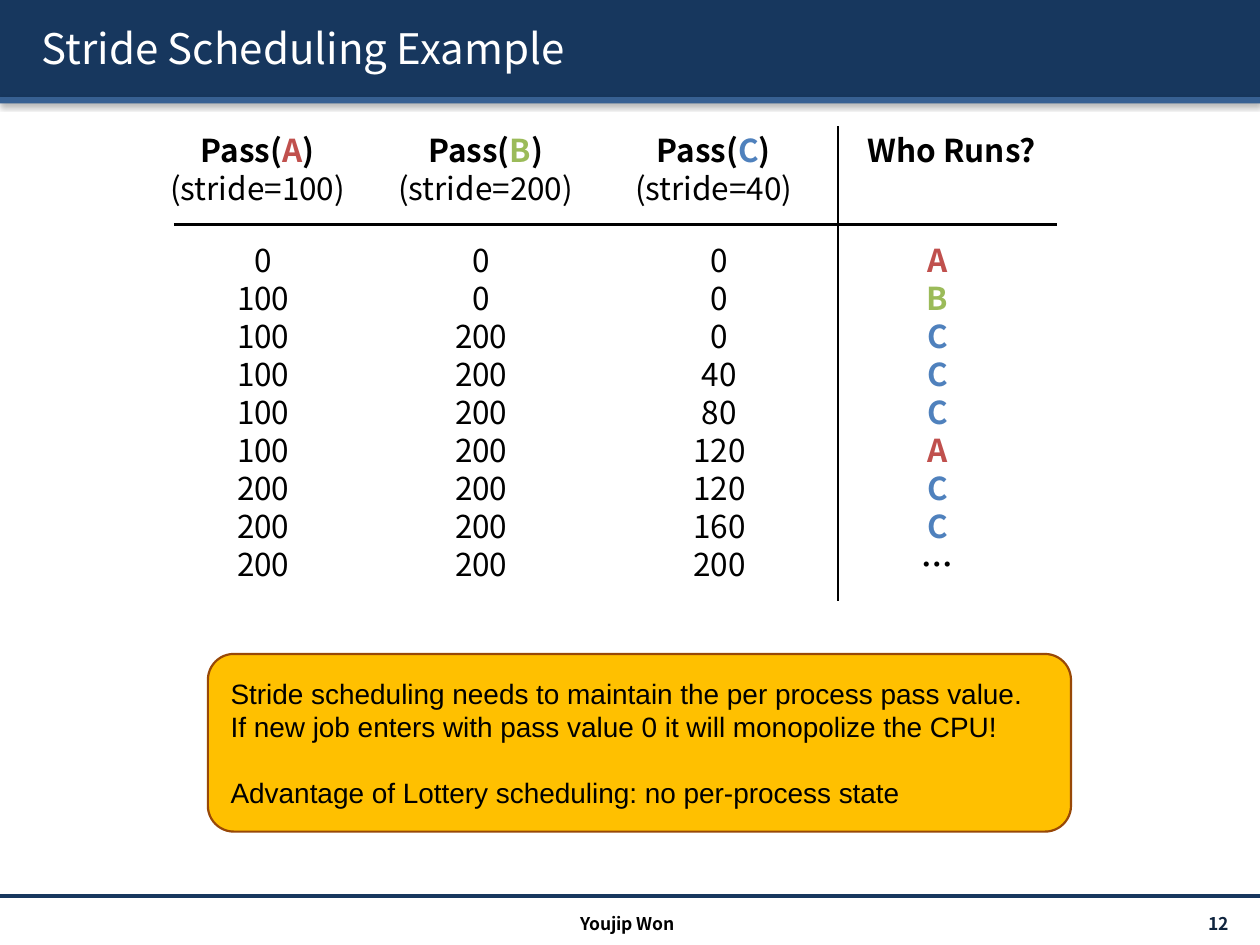
"""Build the stride scheduling example slide."""
import pptx
import pptx.dml.color
import pptx.enum.shapes
import pptx.enum.text
import pptx.oxml
import pptx.oxml.ns
import pptx.util
from lxml import etree

Inches, Pt = pptx.util.Inches, pptx.util.Pt
SHAPE = pptx.enum.shapes.MSO_SHAPE
ALIGN = pptx.enum.text.PP_ALIGN
ANCHOR = pptx.enum.text.MSO_ANCHOR
FONT = "Noto Sans CJK KR"
COLORS = {
    "navy": "17375E", "blue": "376092", "ink": "0F243E", "black": "000000",
    "white": "FFFFFF", "amber": "FFC000", "brown": "984807",
    "A": "C0504D", "B": "9BBB59", "C": "4F81BD",
}


def rgb(name):
    return pptx.dml.color.RGBColor.from_string(COLORS[name])


def effects(blur=0, dist=0, angle=90, alpha=100):
    return pptx.oxml.parse_xml(
        f'<a:effectLst {pptx.oxml.ns.nsdecls("a")}>'
        f'<a:outerShdw blurRad="{Pt(blur)}" dist="{Pt(dist)}" dir="{angle * 60000}"'
        f' algn="t" rotWithShape="0"><a:srgbClr val="000000">'
        f'<a:alpha val="{alpha * 1000}"/></a:srgbClr></a:outerShdw></a:effectLst>')


def add_run(p, text, size=18, font=FONT, color="black", bold=False):
    r = p.add_run()
    r.text = text
    r.font.size, r.font.bold, r.font.name = Pt(size), bold, font
    r.font.color.rgb = rgb(color)
    ea = etree.SubElement(r._r.get_or_add_rPr(), pptx.oxml.ns.qn("a:ea"))
    ea.set("typeface", font)
    return r


class SlideBuilder:
    def __init__(self, prs):
        self.s = prs.slides.add_slide(prs.slide_layouts[5])

    def place(self, left, top, width, height):
        return Inches(left), Inches(top), Inches(width), Inches(height)

    def title(self, text, *box):
        sp = self.s.shapes.title
        sp.left, sp.top, sp.width, sp.height = self.place(*box)
        self.s.shapes._spTree.append(sp._element)
        tf = sp.text_frame
        tf.auto_size = pptx.enum.text.MSO_AUTO_SIZE.NONE
        tf.vertical_anchor = ANCHOR.MIDDLE
        tf.paragraphs[0].alignment = ALIGN.LEFT
        r = add_run(tf.paragraphs[0], text, size=24, color="white")
        fill = r._r.rPr.find(pptx.oxml.ns.qn("a:solidFill"))
        fill.addnext(effects(dist=2, angle=45))

    def shape(self, kind, box, fill):
        sp = self.s.shapes.add_shape(kind, *self.place(*box))
        sp.shadow.inherit = False
        sp.fill.solid()
        sp.fill.fore_color.rgb = rgb(fill)
        sp.line.fill.background()
        return sp

    def bar(self, top, height, fill):
        sp = self.shape(SHAPE.RECTANGLE, (0, top, 10, height), fill)
        shadow = effects(blur=3.1, dist=1.6, alpha=38)
        sp._element.spPr.replace(sp._element.spPr.effectLst, shadow)

    def line(self, x1, y1, x2, y2, color="black", width=1.5):
        line = self.s.shapes.add_connector(
            pptx.enum.shapes.MSO_CONNECTOR.STRAIGHT,
            Inches(x1), Inches(y1), Inches(x2), Inches(y2))
        line.line.color.rgb = rgb(color)
        line.line.width = Pt(width)
        etree.SubElement(line._element.spPr, pptx.oxml.ns.qn("a:effectLst"))

    def text(self, box, paragraphs, align=ALIGN.CENTER, anchor=ANCHOR.TOP, pitch=21.7):
        """Each paragraph is a list of (text, format) runs."""
        tf = self.s.shapes.add_textbox(*self.place(*box)).text_frame
        tf.word_wrap = True
        tf.vertical_anchor = anchor
        for i, runs in enumerate(paragraphs):
            p = tf.add_paragraph() if i else tf.paragraphs[0]
            p.alignment, p.line_spacing = align, Pt(pitch)
            for text, style in runs:
                add_run(p, text, **style)

    def callout(self, box, lines):
        sp = self.shape(SHAPE.ROUNDED_RECTANGLE, box, "amber")
        sp.adjustments[0] = 0.146
        sp.line.color.rgb = rgb("brown")
        sp.line.width = Pt(1.25)
        tf = sp.text_frame
        tf.word_wrap = True
        tf.vertical_anchor = ANCHOR.MIDDLE
        tf.margin_left = tf.margin_right = Inches(0.12)
        for i, (text, gap) in enumerate(lines):
            p = tf.add_paragraph() if i else tf.paragraphs[0]
            p.alignment, p.space_before = ALIGN.LEFT, Pt(gap)
            add_run(p, text, size=16, font="Arial")


def main():
    prs = pptx.Presentation()
    prs.slide_width, prs.slide_height = Inches(10), Inches(7.5)
    slide = SlideBuilder(prs)
    bold = {"bold": True}

    slide.bar(0, 0.77, "navy")
    slide.bar(0.77, 0.05, "blue")
    slide.line(0, 7.11, 10, 7.11, "navy", 2)
    slide.title("Stride Scheduling Example", 0.23, 0.06, 9.61, 0.64)
    slide.text((8.71, 7.21, 1.14, 0.24), [[("12", {"size": 10, "color": "ink", **bold})]],
               align=ALIGN.RIGHT, anchor=ANCHOR.MIDDLE, pitch=12)
    slide.text((3.32, 7.2, 3.32, 0.24), [[("Youjip Won", {"size": 10, **bold})]], pitch=12)

    slide.line(1.38, 1.78, 8.39, 1.78)
    slide.line(6.65, 1, 6.65, 4.77)
    columns = [
        ("A", 100, 1.46, [0] + [100] * 5 + [200] * 3),
        ("B", 200, 3.19, [0] * 2 + [200] * 7),
        ("C", 40, 5.08, [0, 0, 0, 40, 80, 120, 120, 160, 200]),
    ]
    for i, (job, stride, left, values) in enumerate(columns):
        slide.text((1.22 + 1.81 * i, 0.99, 1.65, 0.71), [
            [("Pass(", bold), (job, {"color": job, **bold}), (")", bold)],
            [(f"(stride={stride})", {})]])
        slide.text((left, 1.86, 1.26, 2.83), [[(str(value), {})] for value in values])
    slide.text((6.73, 0.99, 1.65, 0.4), [[("Who Runs?", bold)]])
    slide.text((6.81, 1.86, 1.26, 2.83), [
        [(job, {"color": job if job in COLORS else "black", **bold})] for job in "ABCCCACC…"])

    slide.callout((1.65, 5.19, 6.85, 1.41), [
        ("Stride scheduling needs to maintain the per process pass value.", 0),
        ("If new job enters with pass value 0 it will monopolize the CPU!", 0),
        ("Advantage of Lottery scheduling: no per-process state", 18.4)])
    prs.save("out.pptx")


if __name__ == "__main__":
    main()
